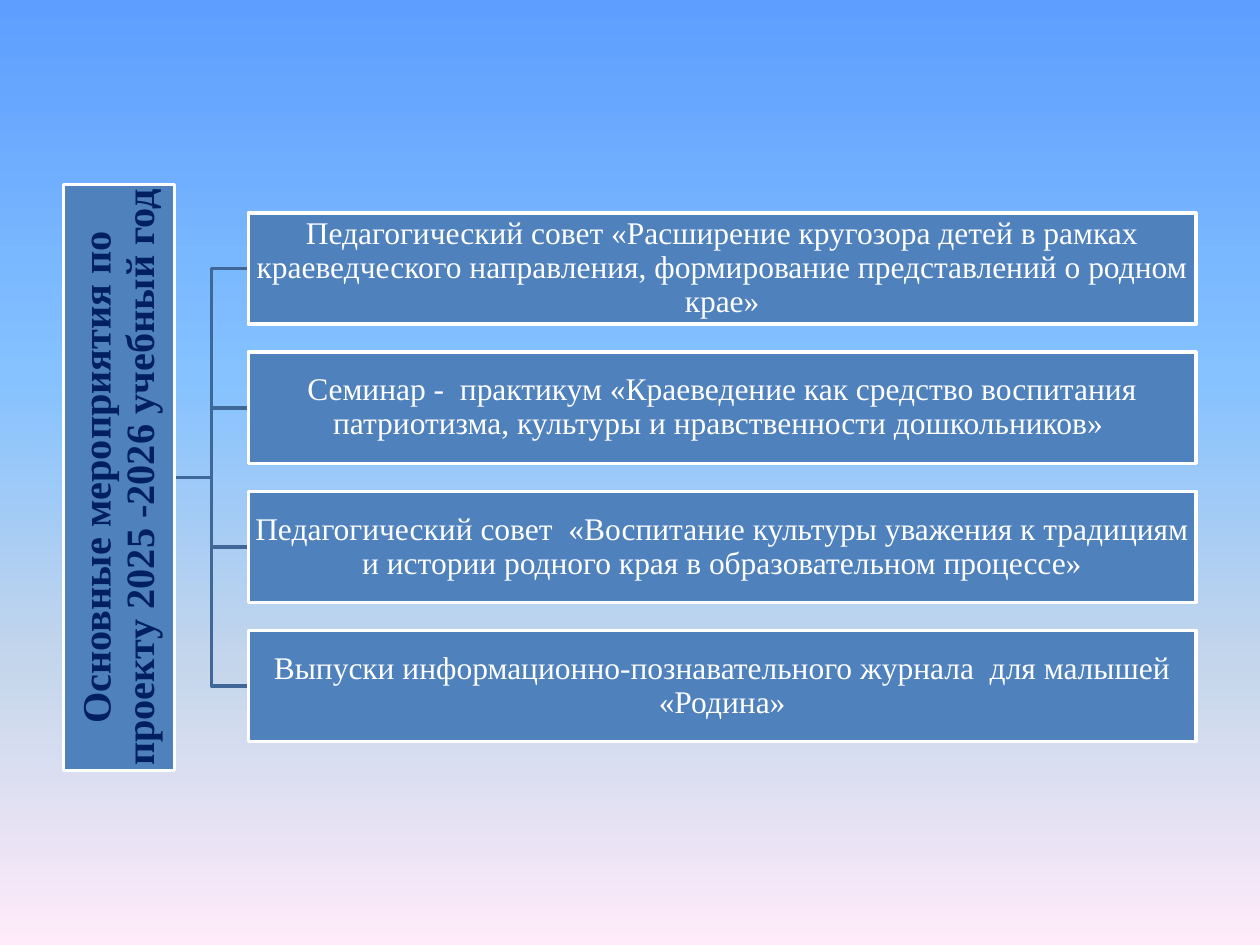
from lxml import etree
from pptx import Presentation
from pptx.dml.color import RGBColor
from pptx.enum.shapes import MSO_SHAPE
from pptx.enum.text import MSO_ANCHOR, PP_ALIGN
from pptx.oxml.ns import qn
from pptx.util import Pt

RECT = MSO_SHAPE.RECTANGLE
MIDDLE = MSO_ANCHOR.MIDDLE
CENTER = PP_ALIGN.CENTER

BLUE = RGBColor(0x4F, 0x81, 0xBD)
LINE_BLUE = RGBColor(0x3F, 0x67, 0x97)
NAVY = RGBColor(0x00, 0x20, 0x60)
WHITE = RGBColor(0xFF, 0xFF, 0xFF)
SKY = [
    (0, RGBColor(0x5E, 0x9E, 0xFF)),
    (40, RGBColor(0x85, 0xC2, 0xFF)),
    (70, RGBColor(0xC4, 0xD6, 0xEB)),
    (100, RGBColor(0xFF, 0xEB, 0xFA)),
]

FONT = "Times New Roman"
TITLE = "Основные мероприятия по проекту 2025 -2026 учебный год"
EVENTS = [
    "Педагогический совет «Расширение кругозора детей в рамках краеведческого направления, формирование представлений о родном крае»",
    "Семинар -  практикум «Краеведение как средство воспитания патриотизма, культуры и нравственности дошкольников» ",
    "Педагогический совет  «Воспитание культуры уважения к традициям и истории родного края в образовательном процессе»",
    "Выпуски информационно-познавательного журнала  для малышей «Родина»",
]


def paint_background(slide, stops):
    fill = slide.background.fill
    fill.gradient()
    fill.gradient_angle = 270
    gs_lst = slide.background._cSld.find(".//" + qn("a:gsLst"))
    for gs in list(gs_lst):
        gs_lst.remove(gs)
    for percent, color in stops:
        gs = etree.SubElement(gs_lst, qn("a:gs"), pos=str(percent * 1000))
        etree.SubElement(gs, qn("a:srgbClr"), val=str(color))


def add_box(slide, x, y, w, h, text, size, color, inset, bold=False):
    sp = slide.shapes.add_shape(RECT, Pt(x), Pt(y), Pt(w), Pt(h))
    sp.shadow.inherit = False
    sp.fill.solid()
    sp.fill.fore_color.rgb = BLUE
    sp.line.color.rgb = WHITE
    sp.line.width = Pt(2)
    tf = sp.text_frame
    tf.word_wrap = True
    tf.vertical_anchor = MIDDLE
    tf.margin_left = tf.margin_right = Pt(inset)
    tf.margin_top = tf.margin_bottom = Pt(inset)
    tf.text = text
    p = tf.paragraphs[0]
    p.alignment = CENTER
    p.line_spacing = 0.9
    font = p.runs[0].font
    font.name = FONT
    font.size = Pt(size)
    font.bold = bold
    font.color.rgb = color
    return sp


def add_elbow(slide, x1, y1, x2, y2):
    mid = (x1 + x2) / 2
    builder = slide.shapes.build_freeform(Pt(x1), Pt(y1))
    corners = [(mid, y1), (mid, y2), (x2, y2)]
    builder.add_line_segments([(Pt(x), Pt(y)) for x, y in corners], close=False)
    sp = builder.convert_to_shape()
    sp.shadow.inherit = False
    sp.fill.background()
    sp.line.color.rgb = LINE_BLUE
    sp.line.width = Pt(2)


def add_hierarchy(slide, x, y, w, h, title, events):
    bar = 63.5
    link = 42
    gap = 16
    middle = y + h / 2
    events_x = x + bar + link
    events_h = len(events) * (bar + gap) - gap
    tops = [middle - events_h / 2 + i * (bar + gap) for i in range(len(events))]

    for top in reversed(tops):
        add_elbow(slide, x + bar, middle, events_x, top + bar / 2)
    root = add_box(slide, x + bar / 2 - h / 2, middle - bar / 2, h, bar,
                   title, 23, NAVY, 1.2, bold=True)
    root.rotation = 270
    for top, event in zip(tops, events):
        add_box(slide, events_x, top, x + w - events_x, bar, event, 18, WHITE, 0.9)


def main():
    prs = Presentation()
    prs.slide_width = Pt(720)
    prs.slide_height = Pt(540)
    slide = prs.slides.add_slide(prs.slide_layouts[6])
    paint_background(slide, SKY)
    add_hierarchy(slide, 36.4, 105.4, 647, 334.8, TITLE, EVENTS)
    prs.save("out.pptx")


if __name__ == "__main__":
    main()
